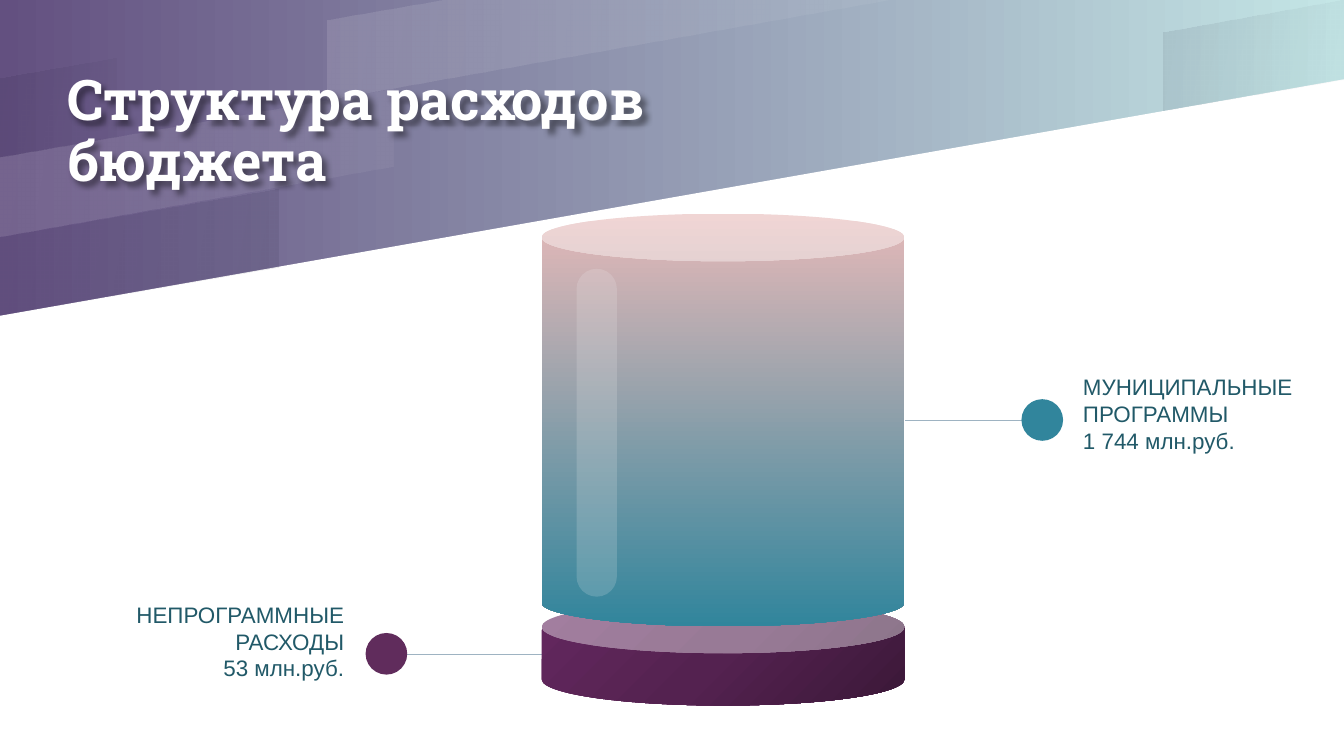
"""Build the budget expenditure structure slide."""
from dataclasses import dataclass
from typing import Any, Optional

from pptx import Presentation, util as u
from pptx.dml import color
from pptx.enum import shapes, text
from pptx.oxml import parse_xml
from pptx.oxml.ns import nsdecls


@dataclass(frozen=True)
class Theme:
    title_font: str = "Roboto Slab"
    body_font: str = "Arial"
    title_size: float = 30
    body_size: float = 12
    white: str = "FFFFFF"
    shade: str = "00001A"
    violet: str = "635080"
    mint: str = "C4E6E6"
    label: str = "215968"
    rule: str = "9EB3C2"
    teal: str = "31859C"
    pink: str = "E6B9B8"
    plum: str = "602C5C"
    plum_dark: str = "3B1838"
    plum_mid: str = "542250"
    plum_light: str = "64285F"
    gloss: str = "F2F2F2"


T = Theme()


@dataclass(frozen=True)
class Stop:
    pos: int
    rgb: str
    alpha: int = 100


@dataclass(frozen=True)
class Gradient:
    stops: tuple[Stop, ...]
    angle: Optional[int] = None


@dataclass(frozen=True)
class Band:
    points: tuple[tuple[float, float], ...]
    fill: Any


@dataclass(frozen=True)
class Solid:
    kind: Any
    box: tuple[float, float, float, float]
    fill: Any
    adj: Optional[float] = None


@dataclass(frozen=True)
class Callout:
    box: tuple[float, float, float, float]
    lines: tuple[str, ...]
    align: Any
    x1: float
    x2: float
    y: float


LIGHT = Gradient((Stop(0, T.white, 12), Stop(100, T.white, 5)), 10)
DARK = Gradient((Stop(0, T.shade, 8), Stop(100, T.shade, 2)), 10)
DARKER = Gradient((Stop(0, T.shade, 2), Stop(100, T.shade, 8)), 10)
BACKDROP = Gradient((Stop(0, T.violet), Stop(100, T.mint)), 0)
CORNER = Gradient((Stop(0, T.plum_dark), Stop(50, T.plum_mid), Stop(100, T.plum_light)))
FADE = Gradient((Stop(0, T.pink), Stop(100, T.teal)), 90)

BANDS = (
    Band(((0, 5.63), (10, 5.63), (10, 0.59), (0, 2.35)), Stop(0, T.white)),
    Band(((3.32, 0), (2.44, 0.15), (2.44, 0.74), (6.65, 0)), LIGHT),
    Band(((0, 0.58), (0, 1.17), (0.87, 1.02), (0.87, 0.43)), DARK),
    Band(((0, 1.76), (0, 2.35), (2.07, 1.99), (2.07, 1.4)), DARKER),
    Band(((10, 0), (9.99, 0), (8.66, 0.24), (8.66, 0.82), (10, 0.59)), DARK),
    Band(((0, 1.17), (0, 1.76), (2.93, 1.24), (2.93, 0.66)), LIGHT),
)
CALLOUTS = (
    Callout((7.96, 2.32, 1.77, 1.51), ("МУНИЦИПАЛЬНЫЕ ПРОГРАММЫ", "1 744 млн.руб."),
            text.PP_ALIGN.LEFT, 7.66, 6.73, 3.13),
    Callout((0.62, 4.33, 2.04, 0.88), ("НЕПРОГРАММНЫЕ", "РАСХОДЫ", "53 млн.руб."),
            text.PP_ALIGN.RIGHT, 2.8, 4.67, 4.87),
)
KIND = shapes.MSO_SHAPE
SOLIDS = (
    Solid(KIND.CAN, (4.03, 4.47, 2.7, 0.78), CORNER, 0.5),
    Solid(KIND.CAN, (4.03, 1.59, 2.7, 3.07), FADE, 0.131),
    Solid(KIND.OVAL, (7.6, 2.97, 0.31, 0.31), Stop(0, T.teal)),
    Solid(KIND.OVAL, (2.72, 4.71, 0.31, 0.31), Stop(0, T.plum)),
    Solid(KIND.ROUNDED_RECTANGLE, (4.29, 2, 0.3, 2.44), Stop(0, T.gloss, 18), 0.5),
)
SHADOW = ('<a:effectLst %s><a:outerShdw blurRad="38100" dist="38100" dir="2700000" algn="tl">'
          '<a:srgbClr val="000000"><a:alpha val="43000"/></a:srgbClr></a:outerShdw></a:effectLst>')


def inches(values: tuple[float, ...]) -> list[u.Length]:
    """Convert numbers to lengths."""
    return [u.Inches(v) for v in values]


def assign(obj: Any, **values: Any) -> None:
    """Set several attributes on one object."""
    for name, value in values.items():
        setattr(obj, name, value)


def rgb_xml(stop: Stop) -> str:
    """Return the colour element of a stop."""
    return f'<a:srgbClr val="{stop.rgb}"><a:alpha val="{stop.alpha * 1000}"/></a:srgbClr>'


def paint(el: Any, fill: Any, style: Any) -> None:
    """Fill an element with a gradient or a single, possibly clear, colour."""
    fill.gradient()
    if isinstance(style, Stop):
        xml = f'<a:solidFill {nsdecls("a")}>{rgb_xml(style)}</a:solidFill>'
    else:
        stops = "".join(f'<a:gs pos="{s.pos * 1000}">{rgb_xml(s)}</a:gs>' for s in style.stops)
        if style.angle is None:
            way = '<a:path path="circle"><a:fillToRect l="100000" t="100000"/></a:path>'
        else:
            way = f'<a:lin ang="{style.angle * 60000}" scaled="0"/>'
        xml = f'<a:gradFill {nsdecls("a")} rotWithShape="1"><a:gsLst>{stops}</a:gsLst>{way}</a:gradFill>'
    old = el.xpath(".//a:gradFill")[0]
    old.getparent().replace(old, parse_xml(xml))


def finish(sp: Any, style: Any) -> None:
    """Paint a shape without outline or shadow."""
    paint(sp._element, sp.fill, style)
    sp.line.fill.background()
    sp.shadow.inherit = False


def add_band(slide: Any, band: Band) -> None:
    """Draw one slanted band."""
    first, *rest = [inches(p) for p in band.points]
    builder = slide.shapes.build_freeform(*first, scale=1.0)
    builder.add_line_segments(rest, close=True)
    finish(builder.convert_to_shape(), band.fill)


def add_solid(slide: Any, solid: Solid) -> None:
    """Draw one preset shape."""
    sp = slide.shapes.add_shape(solid.kind, *inches(solid.box))
    if solid.adj is not None:
        sp.adjustments[0] = solid.adj
    finish(sp, solid.fill)


def set_frame(tf: Any, inset: float) -> None:
    """Set wrapping, anchor and insets of a text frame."""
    assign(tf, word_wrap=True, auto_size=text.MSO_AUTO_SIZE.NONE,
           vertical_anchor=text.MSO_ANCHOR.MIDDLE,
           **{f"margin_{side}": u.Inches(inset) for side in ("left", "top", "right", "bottom")})


def add_run(p: Any, words: str, rgb: str, **fmt: Any) -> None:
    """Add a formatted run to a paragraph."""
    r = p.add_run()
    r.text = words
    r.font.color.rgb = color.RGBColor.from_string(rgb)
    assign(r.font, **fmt)


def add_title(slide: Any, words: str) -> None:
    """Place the title above the bands."""
    sp = slide.shapes.title
    slide.shapes._spTree.append(sp._element)
    left, top, width, height = inches((0.5, 0, 6, 1.98))
    assign(sp, left=left, top=top, width=width, height=height)
    sp._element.spPr.append(parse_xml(SHADOW % nsdecls("a")))
    set_frame(sp.text_frame, 0)
    p = sp.text_frame.paragraphs[0]
    assign(p, alignment=text.PP_ALIGN.LEFT, line_spacing=0.9)
    add_run(p, words, T.white, name=T.title_font, size=u.Pt(T.title_size), bold=True)


def add_callout(slide: Any, c: Callout) -> None:
    """Draw a label and its leader line."""
    tf = slide.shapes.add_textbox(*inches(c.box)).text_frame
    set_frame(tf, 0.1)
    for i, words in enumerate(c.lines):
        p = tf.add_paragraph() if i else tf.paragraphs[0]
        p.alignment = c.align
        add_run(p, words, T.label, name=T.body_font, size=u.Pt(T.body_size))
    cxn = slide.shapes.add_connector(shapes.MSO_CONNECTOR.STRAIGHT, *inches((c.x1, c.y, c.x2, c.y)))
    cxn.line.color.rgb = color.RGBColor.from_string(T.rule)
    cxn.line.width = u.Pt(0.75)
    cxn._element.spPr.append(parse_xml(f'<a:effectLst {nsdecls("a")}/>'))


def main() -> None:
    """Build and save the slide."""
    prs = Presentation()
    assign(prs, slide_width=u.Inches(10), slide_height=u.Inches(10 * 9 / 16))
    slide = prs.slides.add_slide(prs.slide_layouts[5])
    paint(slide._element, slide.background.fill, BACKDROP)
    for band in BANDS:
        add_band(slide, band)
    add_title(slide, "Структура расходов бюджета")
    for callout in CALLOUTS:
        add_callout(slide, callout)
    for solid in SOLIDS:
        add_solid(slide, solid)
    prs.save("out.pptx")


if __name__ == "__main__":
    main()
